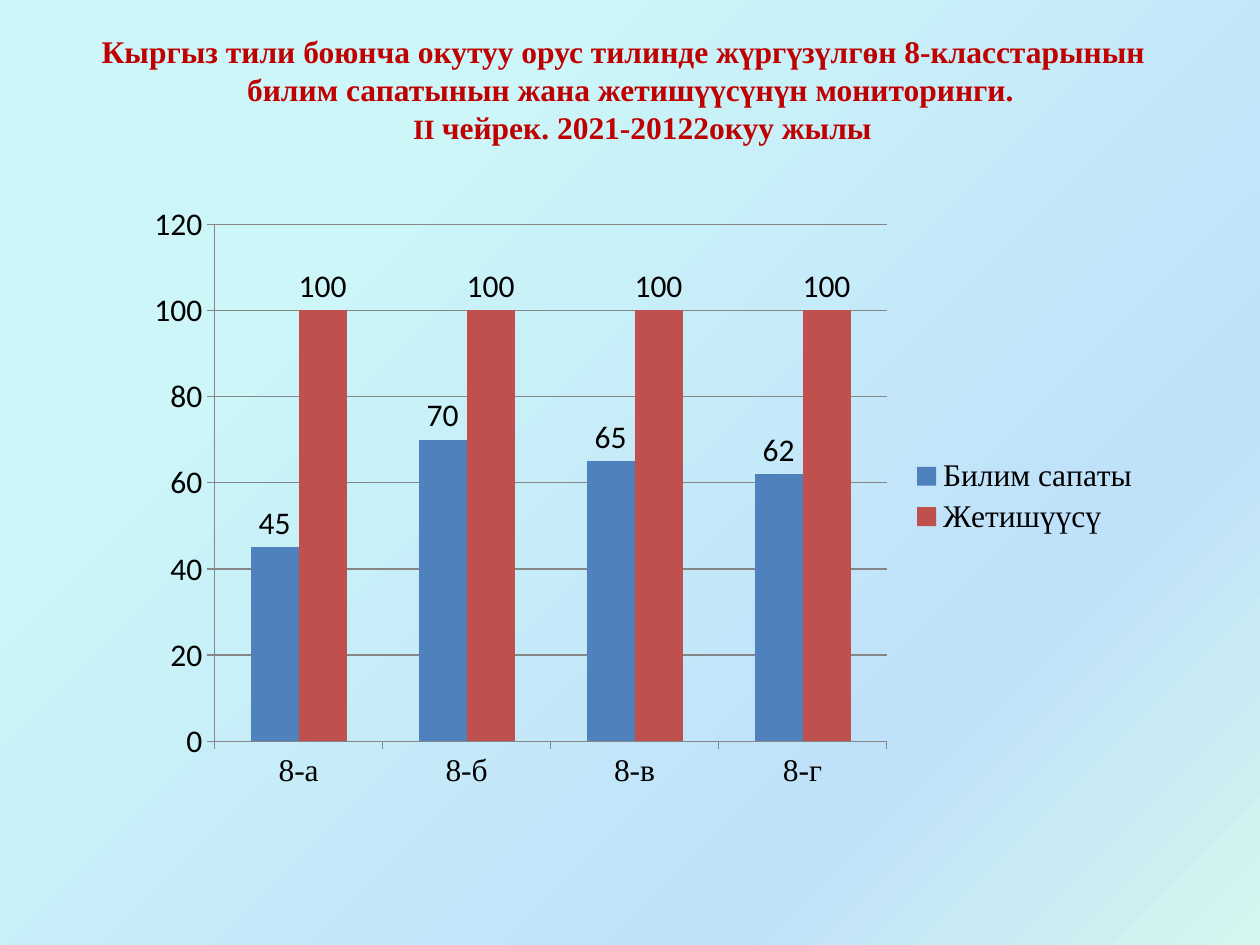
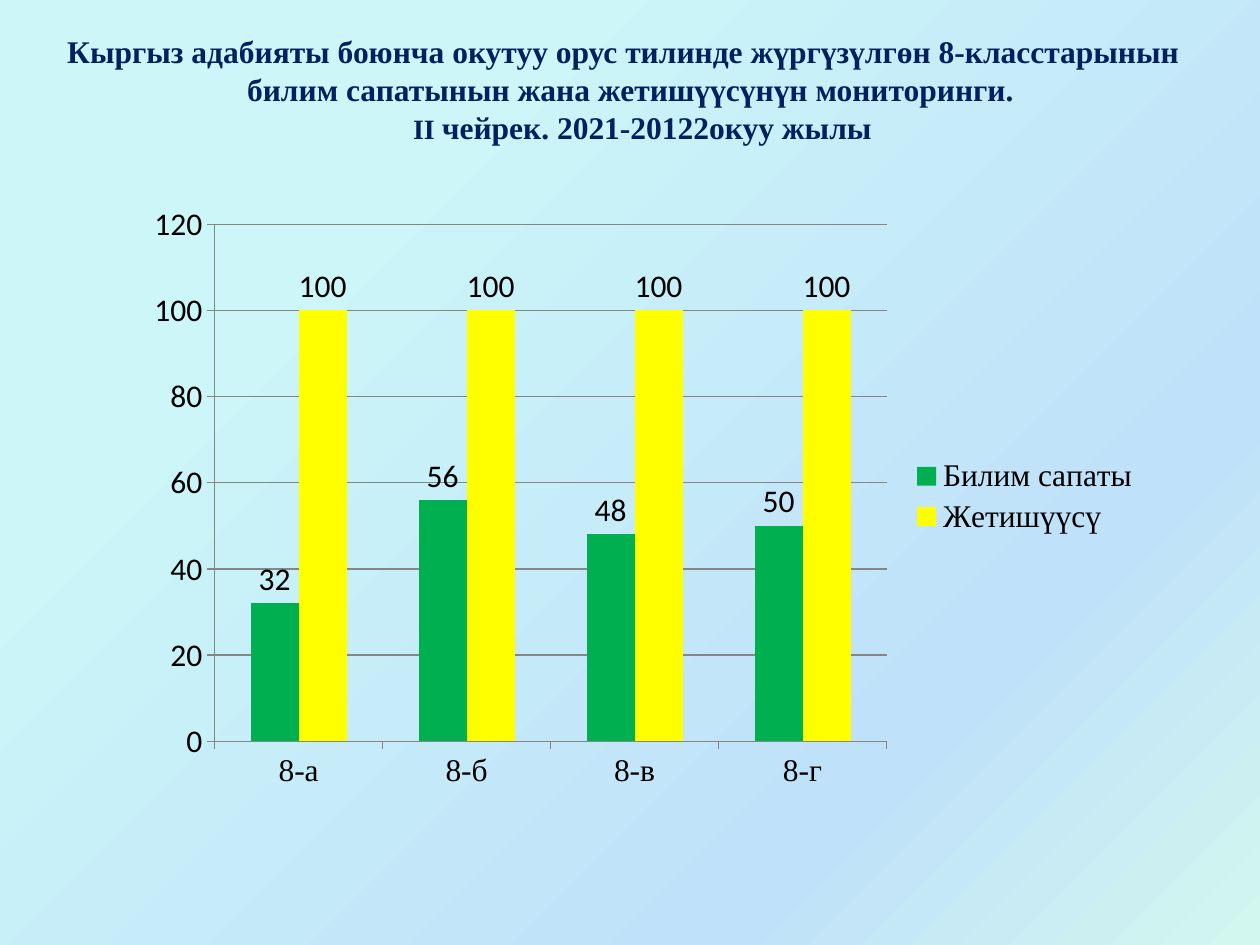
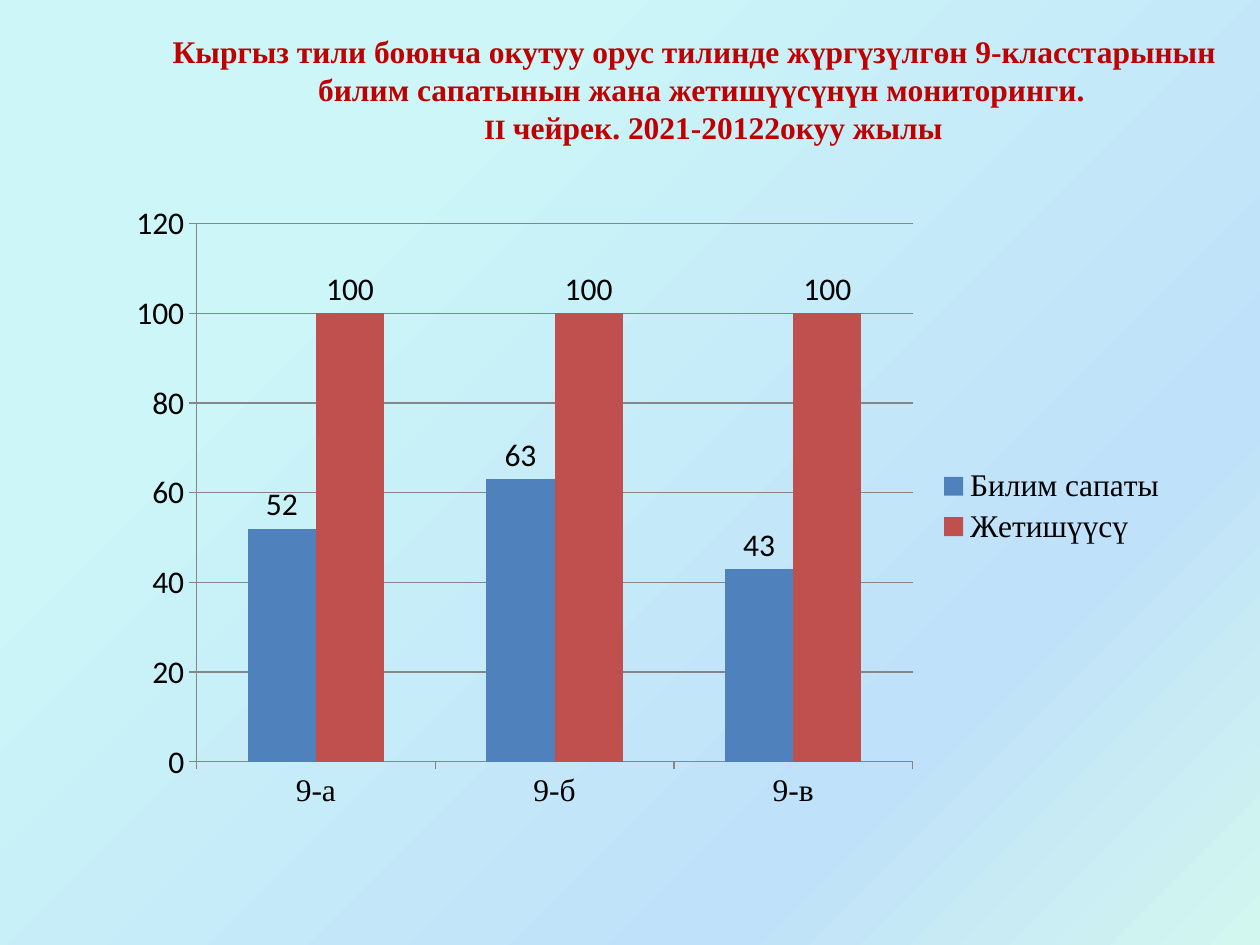
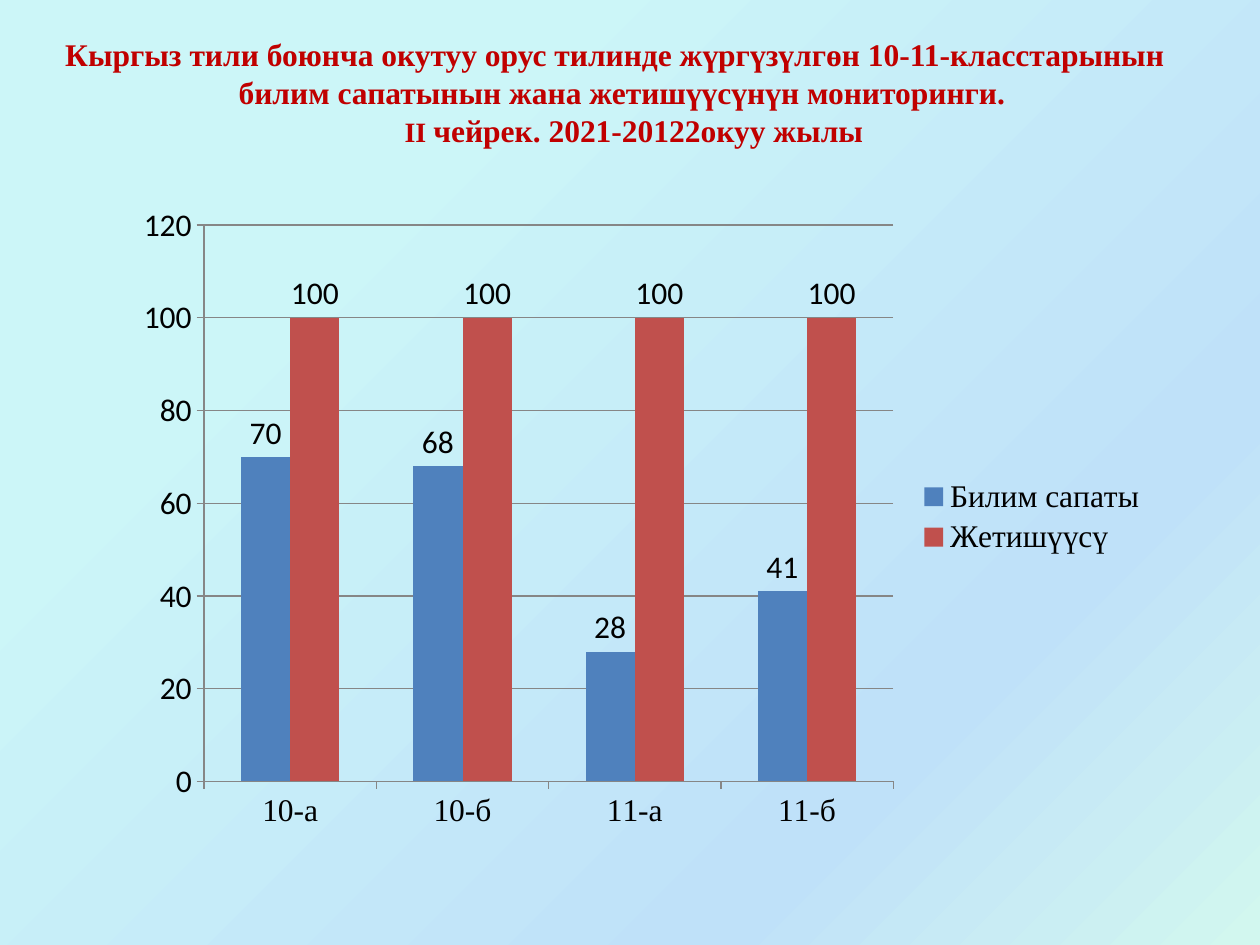
from pptx import Presentation, util as u
from pptx.chart.data import CategoryChartData
from pptx.dml.color import RGBColor
from pptx.enum import chart as ch, text
from pptx.oxml import parse_xml
from pptx.oxml.ns import nsdecls, qn

PX = 914400 / 126
SLIDE_W, SLIDE_H = 1260, 945

RED = RGBColor(0xC0, 0x00, 0x00)
NAVY = RGBColor(0x00, 0x20, 0x60)
BLACK = RGBColor(0x00, 0x00, 0x00)
AXIS_GREY = RGBColor(0x86, 0x86, 0x86)
BLUE = RGBColor(0x4F, 0x81, 0xBD)
BRICK = RGBColor(0xC0, 0x50, 0x4D)
GREEN = RGBColor(0x00, 0xB0, 0x50)
YELLOW = RGBColor(0xFF, 0xFF, 0x00)
PALE_CYAN = RGBColor(0xCC, 0xF6, 0xF8)
PALE_BLUE = RGBColor(0xBF, 0xE1, 0xF9)
PALE_MINT = RGBColor(0xD2, 0xF7, 0xEF)
BACKGROUND_STOPS = [(25, PALE_CYAN), (75, PALE_BLUE), (100, PALE_MINT)]

SERIF, SANS = "Times New Roman", "Calibri"
QUALITY, SUCCESS = "Билим сапаты", "Жетишүүсү"

# subject, classes, title colour, series colours, title box, chart box, quality by class
REPORTS = [
    ("тили", "8", RED, (BLUE, BRICK), (39, 26, 1191, 127), (134, 193, 1019, 607),
     {"8-а": 45, "8-б": 70, "8-в": 65, "8-г": 62}),
    ("адабияты", "8", NAVY, (GREEN, YELLOW), (39, 26, 1191, 127), (134, 193, 1019, 607),
     {"8-а": 32, "8-б": 56, "8-в": 48, "8-г": 50}),
    ("тили", "9", RED, (BLUE, BRICK), (154, 26, 1103, 165), (115, 192, 1065, 629),
     {"9-а": 52, "9-б": 63, "9-в": 43}),
    ("тили", "10-11", RED, (BLUE, BRICK), (49, 29, 1154, 165), (123, 193, 1037, 648),
     {"10-а": 70, "10-б": 68, "11-а": 28, "11-б": 41}),
]


def px(length):
    return u.Emu(round(length * PX))


def paint_background(master):
    fill = master.background.fill
    fill.gradient()
    fill.gradient_angle = 315
    stops = "".join(
        f'<a:gs pos="{percent * 1000}"><a:srgbClr val="{color}"/></a:gs>'
        for percent, color in BACKGROUND_STOPS)
    stop_list = next(master.element.iter(qn("a:gsLst")))
    stop_list.getparent().replace(
        stop_list, parse_xml(f'<a:gsLst {nsdecls("a")}>{stops}</a:gsLst>'))


def add_title(slide, box, subject, classes, color):
    frame = slide.shapes.add_textbox(*map(px, box)).text_frame
    frame.word_wrap = True
    frame.vertical_anchor = text.MSO_ANCHOR.TOP
    # Each line: its runs, left indent, right indent
    lines = [
        ([f"Кыргыз {subject} боюнча окутуу орус тилинде жүргүзүлгөн "
          f"{classes}-класстарынын"], 0, 22),
        (["билим сапатынын жана жетишүүсүнүн мониторинги."], 0, 8),
        (["II ", "чейрек. 2021-20122окуу жылы"], 16, 0),
    ]
    for index, (parts, left, right) in enumerate(lines):
        line = frame.paragraphs[0] if index == 0 else frame.add_paragraph()
        line.alignment = text.PP_ALIGN.CENTER
        indents = line._p.get_or_add_pPr()
        indents.set("marL", str(px(left)))
        indents.set("marR", str(px(right)))
        for part in parts:
            run = line.add_run()
            run.text = part
            run.font.size = u.Pt(16 if part == "II " else 18)
        line.font.name = SERIF
        line.font.bold = True
        line.font.color.rgb = color


def set_font(font, name):
    font.name = name
    font.size = u.Pt(18)
    font.color.rgb = BLACK


def style_axis(axis, font_name):
    set_font(axis.tick_labels.font, font_name)
    axis.major_tick_mark = ch.XL_TICK_MARK.OUTSIDE
    axis.minor_tick_mark = ch.XL_TICK_MARK.NONE
    axis.format.line.color.rgb = AXIS_GREY
    axis.format.line.width = u.Pt(0.75)


def add_results_chart(slide, box, quality, colors):
    data = CategoryChartData(number_format="General")
    data.categories = list(quality)
    data.add_series(QUALITY, list(quality.values()))
    data.add_series(SUCCESS, [100] * len(quality))
    results = slide.shapes.add_chart(
        ch.XL_CHART_TYPE.COLUMN_CLUSTERED, *map(px, box), data).chart
    results.has_title = False
    set_font(results.font, SANS)

    # Clear chart area, so the background shows through
    area = parse_xml(f'<c:spPr {nsdecls("c", "a")}><a:noFill/>'
                     '<a:ln><a:noFill/></a:ln></c:spPr>')
    results.element.find(qn("c:txPr")).addprevious(area)

    # Axes
    style_axis(results.category_axis, SERIF)
    scale = results.value_axis
    style_axis(scale, SANS)
    scale.minimum_scale, scale.maximum_scale, scale.major_unit = 0, 120, 20
    gridline = scale.major_gridlines.format.line
    gridline.color.rgb = AXIS_GREY
    gridline.width = u.Pt(0.75)

    # Columns and their values
    plot = results.plots[0]
    plot.gap_width = 150
    plot.vary_by_categories = False
    for column, color in zip(plot.series, colors):
        column.format.fill.solid()
        column.format.fill.fore_color.rgb = color
        column.invert_if_negative = False
        labels = column.data_labels
        labels.show_value = True
        labels.position = ch.XL_LABEL_POSITION.OUTSIDE_END
        set_font(labels.font, SANS)

    # Legend
    results.has_legend = True
    results.legend.position = ch.XL_LEGEND_POSITION.RIGHT
    results.legend.include_in_layout = False
    set_font(results.legend.font, SERIF)


def main():
    prs = Presentation()
    prs.slide_width, prs.slide_height = px(SLIDE_W), px(SLIDE_H)
    paint_background(prs.slide_master)
    blank = prs.slide_layouts[6]
    for subject, classes, color, colors, title_box, chart_box, quality in REPORTS:
        slide = prs.slides.add_slide(blank)
        add_title(slide, title_box, subject, classes, color)
        add_results_chart(slide, chart_box, quality, colors)
    prs.save("out.pptx")


if __name__ == "__main__":
    main()
